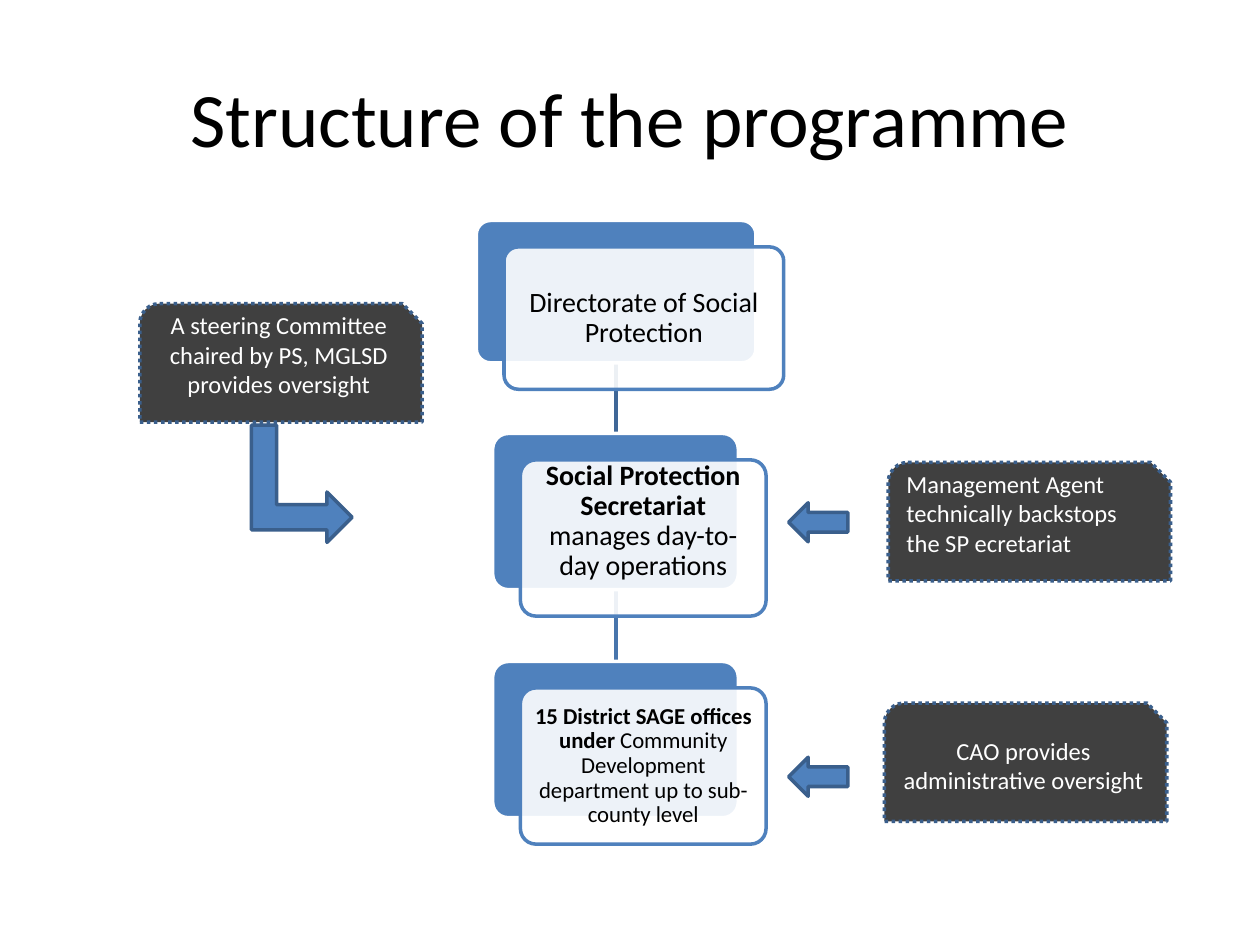
from dataclasses import dataclass

from lxml import etree
from pptx import Presentation
from pptx.dml.color import RGBColor
from pptx.enum.dml import MSO_LINE
from pptx.enum.shapes import MSO_CONNECTOR, MSO_SHAPE
from pptx.enum.text import MSO_ANCHOR, PP_ALIGN
from pptx.oxml.ns import qn
from pptx.util import Inches, Pt

ROUNDED, CARD = MSO_SHAPE.ROUNDED_RECTANGLE, MSO_SHAPE.SNIP_ROUND_RECTANGLE
LEFT_ARROW, BENT_ARROW = MSO_SHAPE.LEFT_ARROW, MSO_SHAPE.BENT_UP_ARROW
LEFT, CENTER, MIDDLE = PP_ALIGN.LEFT, PP_ALIGN.CENTER, MSO_ANCHOR.MIDDLE
DOTTED = MSO_LINE.ROUND_DOT


@dataclass(frozen=True)
class Theme:
    font: str = "Calibri"
    black: str = "000000"
    white: str = "FFFFFF"
    blue: str = "4F81BD"
    edge: str = "3A5F8C"
    dark: str = "404040"
    title_size: int = 44
    card_size: int = 14
    line_width: int = 2


THEME = Theme()
TITLE = "Structure of the programme"

# Levels: box (left, top, width, height), text rise, inset, size, (bold, plain) text
LEVELS = [
    ((3.78, 1.75, 2.22, 1.13), 0, 0.07, 16, ("", "Directorate of Social Protection")),
    ((3.91, 3.44, 1.95, 1.24), 0.13, 0.07, 16,
     ("Social Protection Secretariat ", "manages day-to-day operations")),
    ((3.91, 5.25, 1.95, 1.24), 0, 0.05, 13,
     ("15 District SAGE offices under ",
      "Community Development department up to sub-county level")),
]
FRONT_OFFSET = (0.22, 0.21)
TEXT_MARGIN = 0.035
LINK_X = 4.89
LINK_COLORS = ["3F6797", "4875AC"]

# Cards: left, top, alignment, (top, bottom) inset, text
CARD_SIZE = (2.24, 0.94)
CARDS = [
    (1.11, 2.41, CENTER, (0, 0.18),
     "A steering Committee chaired by PS, MGLSD provides oversight"),
    (7.05, 3.67, LEFT, (0, 0.18),
     "Management Agent technically backstops the SP ecretariat"),
    (7.02, 5.58, CENTER, (0.05, 0.05), "CAO provides administrative oversight"),
]

# Arrows: preset, box, rotation
ARROWS = [
    (LEFT_ARROW, (6.26, 3.99, 0.47, 0.31), 0),
    (LEFT_ARROW, (6.26, 6.01, 0.47, 0.31), 0),
    (BENT_ARROW, (1.93, 3.44, 0.93, 0.8), 90),
]


def color(value):
    return RGBColor.from_string(value)


def add_block(page, preset, box, fill, line):
    block = page.shapes.add_shape(preset, *map(Inches, box))
    block.shadow.inherit = False
    block.fill.solid()
    block.fill.fore_color.rgb = color(fill)
    block.line.color.rgb = color(line)
    block.line.width = Pt(THEME.line_width)
    return block


def write(shape, spans, size, ink, align=CENTER, insets=(0.1, 0.05, 0.1, 0.05)):
    """Fill a shape with one paragraph of (text, bold) spans."""
    frame = shape.text_frame
    frame.word_wrap = True
    frame.vertical_anchor = MIDDLE
    (frame.margin_left, frame.margin_top,
     frame.margin_right, frame.margin_bottom) = map(Inches, insets)
    para = frame.paragraphs[0]
    para.alignment = align
    for text, bold in spans:
        span = para.add_run()
        span.text = text
        span.font.name = THEME.font
        span.font.size = Pt(size)
        span.font.bold = bold
        span.font.color.rgb = color(ink)
    return para


def add_link(page, top, bottom, line):
    link = page.shapes.add_connector(
        MSO_CONNECTOR.STRAIGHT, Inches(LINK_X), Inches(top), Inches(LINK_X), Inches(bottom))
    link.line.color.rgb = color(line)
    link.line.width = Pt(THEME.line_width)
    etree.SubElement(link._element.spPr, qn("a:effectLst"))


def add_level(page, box, rise, inset, size, texts):
    left, top, width, height = box
    front_left, front_top = left + FRONT_OFFSET[0], top + FRONT_OFFSET[1]
    back = add_block(page, ROUNDED, box, THEME.blue, THEME.white)
    front = add_block(page, ROUNDED, (front_left, front_top, width, height),
                      THEME.white, THEME.blue)
    for block in (back, front):
        block.adjustments[0] = 0.1
    # Let the back box shine through the front one
    tint = front._element.spPr.find(qn("a:solidFill"))[0]
    etree.SubElement(tint, qn("a:alpha"), val="90000")
    label = page.shapes.add_textbox(
        Inches(front_left + TEXT_MARGIN), Inches(front_top + TEXT_MARGIN - rise),
        Inches(width - 2 * TEXT_MARGIN), Inches(height - 2 * TEXT_MARGIN))
    spans = [(text, bold) for text, bold in zip(texts, (True, False)) if text]
    para = write(label, spans, size, THEME.black, insets=(inset,) * 4)
    para.line_spacing = 0.9


def main():
    deck = Presentation()
    deck.slide_width, deck.slide_height = Inches(10), Inches(7.5)
    page = deck.slides.add_slide(deck.slide_layouts[6])

    # Title
    title = page.shapes.add_textbox(Inches(0.5), Inches(0.3), Inches(9), Inches(1.25))
    write(title, [(TITLE, False)], THEME.title_size, THEME.black)

    # Links between neighbouring levels, behind the boxes
    boxes = [level[0] for level in LEVELS]
    for upper, lower, line in zip(boxes, boxes[1:], LINK_COLORS):
        add_link(page, upper[1] + upper[3], lower[1], line)

    # Main chain
    for level in LEVELS:
        add_level(page, *level)

    # Side cards
    for left, top, align, (inset_top, inset_bottom), text in CARDS:
        card = add_block(page, CARD, (left, top, *CARD_SIZE), THEME.dark, THEME.edge)
        card.line.dash_style = DOTTED
        write(card, [(text, False)], THEME.card_size, THEME.white, align,
              (0.1, inset_top, 0.1, inset_bottom))

    # Arrows
    for preset, box, rotation in ARROWS:
        arrow = add_block(page, preset, box, THEME.blue, THEME.edge)
        arrow.rotation = rotation

    deck.save("out.pptx")


if __name__ == "__main__":
    main()
